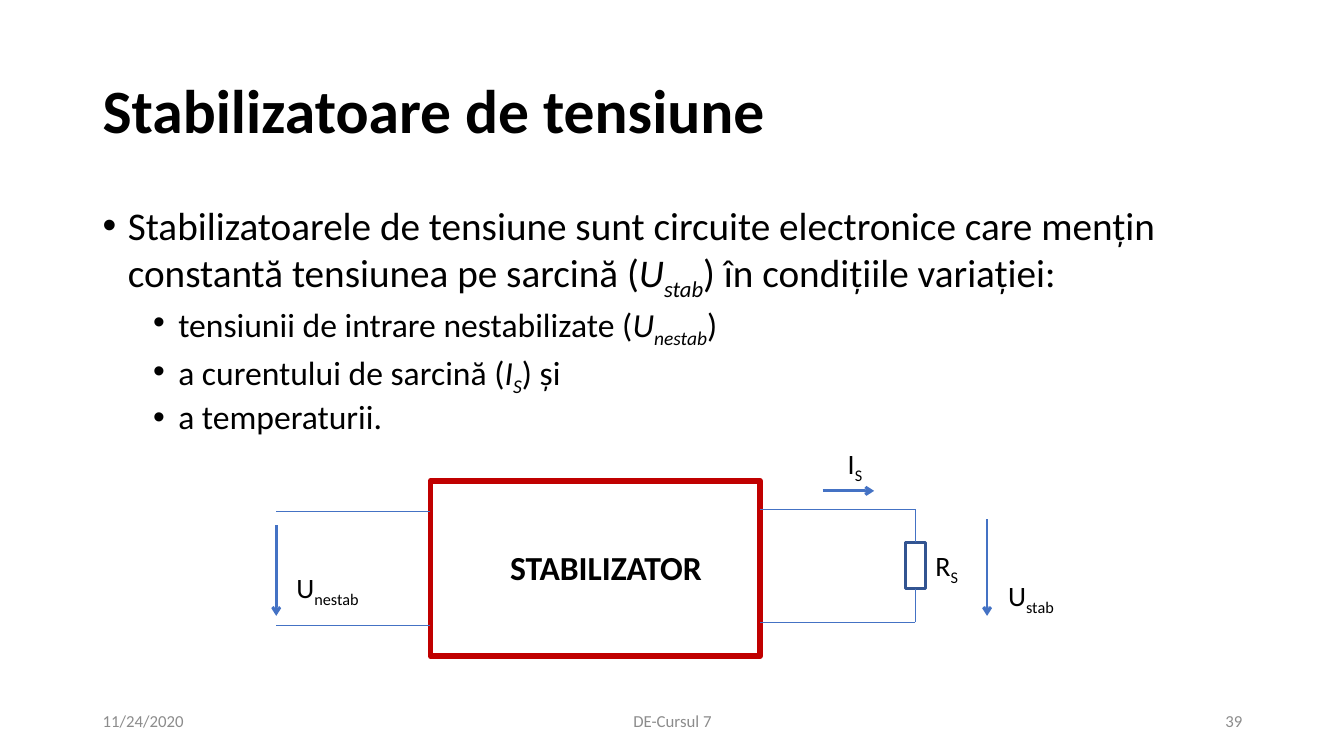
from pptx import Presentation
from pptx.dml.color import RGBColor
from pptx.enum.shapes import MSO_CONNECTOR, MSO_SHAPE
from pptx.enum.text import MSO_ANCHOR, PP_ALIGN
from pptx.oxml.ns import qn
from pptx.util import Inches, Pt
from lxml import etree

LINE = MSO_CONNECTOR.STRAIGHT
RECT = MSO_SHAPE.RECTANGLE
TOP, MID = MSO_ANCHOR.TOP, MSO_ANCHOR.MIDDLE
LEFT, CENTER, RIGHT = PP_ALIGN.LEFT, PP_ALIGN.CENTER, PP_ALIGN.RIGHT
COLORS = {"text": "000000", "foot": "8C8C8C", "wire": "4472C4",
          "block": "C00000", "load": "325491"}


class Board:
    def __init__(self, deck):
        self.slide = deck.slides.add_slide(deck.slide_layouts[6])
        self.font = "Calibri"

    def color(self, name):
        return RGBColor.from_string(COLORS[name])

    def runs(self, para, parts, size, color="text", bold=False):
        for text, style in parts:
            run = para.add_run()
            run.text = text
            look = {"name": self.font, "size": Pt(size), "bold": bold,
                    "italic": "i" in style}
            for key, value in look.items():
                setattr(run.font, key, value)
            run.font.color.rgb = self.color(color)
            if "s" in style:
                run.font._element.set("baseline", "-25000")

    def frame(self, box, wrap=True, anchor=TOP):
        shape = self.slide.shapes.add_textbox(*map(Inches, box))
        frame = shape.text_frame
        for key, value in {"word_wrap": wrap, "vertical_anchor": anchor}.items():
            setattr(frame, key, value)
        return frame

    def text(self, box, parts, size, color="text", bold=False,
             align=LEFT, wrap=True, anchor=TOP, space=1.0):
        para = self.frame(box, wrap, anchor).paragraphs[0]
        for key, value in {"alignment": align, "line_spacing": space}.items():
            setattr(para, key, value)
        self.runs(para, parts, size, color, bold)

    def bullets(self, box, items):
        frame = self.frame(box)
        for index, (level, parts) in enumerate(items):
            para = frame.add_paragraph() if index else frame.paragraphs[0]
            look = {"level": level, "line_spacing": 0.9,
                    "space_before": Pt(5 if level else 10)}
            for key, value in look.items():
                setattr(para, key, value)
            props = para._p.get_or_add_pPr()
            props.set("marL", str(Inches(0.25 + 0.5 * level)))
            props.set("indent", str(Inches(-0.25)))
            etree.SubElement(props, qn("a:buFont")).set("typeface", "Arial")
            etree.SubElement(props, qn("a:buChar")).set("char", "•")
            self.runs(para, parts, 28 - 4 * level)

    def rect(self, box, color, width):
        shape = self.slide.shapes.add_shape(RECT, *map(Inches, box))
        shape.shadow.inherit = False
        shape.fill.background()
        shape.line.color.rgb = self.color(color)
        shape.line.width = Pt(width)
        return shape

    def wire(self, start, end, width=0.5, arrow=False):
        line = self.slide.shapes.add_connector(LINE, *map(Inches, start + end))
        line.line.color.rgb = self.color("wire")
        line.line.width = Pt(width)
        if arrow:
            tail = etree.SubElement(line.line._get_or_add_ln(), qn("a:tailEnd"))
            tail.set("type", "arrow")
        etree.SubElement(line._element.spPr, qn("a:effectLst"))
        return line


def main():
    deck = Presentation()
    deck.slide_width, deck.slide_height = Inches(13.33), Inches(7.5)
    board = Board(deck)

    board.text((0.92, 0.4, 11.5, 1.45), [("Stabilizatoare de tensiune", "")], 44,
               bold=True, anchor=MID, space=0.9)
    board.bullets((0.92, 2, 11.5, 4.76), [
        (0, [("Stabilizatoarele de tensiune sunt circuite electronice care mențin "
              "constantă tensiunea pe sarcină (", ""), ("U", "i"), ("stab", "is"),
             (") în condițiile variației:", "")]),
        (1, [("tensiunii de intrare nestabilizate (", ""), ("U", "i"),
             ("nestab", "is"), (")", "")]),
        (1, [("a curentului de sarcină (", ""), ("I", "i"), ("S", "is"),
             (") și", "")]),
        (1, [("a temperaturii.", "")]),
    ])
    for left, width, words, align in [(0.92, 3, "11/24/2020", LEFT),
                                      (4.42, 4.5, "DE-Cursul 7", CENTER),
                                      (9.42, 3, "39", RIGHT)]:
        board.text((left, 6.95, width, 0.4), [(words, "")], 12, "foot",
                   align=align, anchor=MID)

    board.rect((4.27, 4.77, 3.27, 1.74), "block", 4)
    board.text((4.96, 5.38, 2.12, 0.5), [("STABILIZATOR", "")], 24,
               bold=True, wrap=False)
    for left, right, top, low in [(2.74, 4.27, 5.07, 6.2), (7.54, 9.08, 5.05, 6.17)]:
        for y in (top, low):
            board.wire((right, y), (left, y))
    load = board.rect((8.98, 5.38, 0.2, 0.46), "load", 2)
    for site, near, far in [(0, 5.38, 5.05), (2, 5.84, 6.17)]:
        board.wire((9.08, near), (9.08, far)).begin_connect(load, site)

    for start, end in [((2.74, 5.21), (2.74, 6.11)), ((9.79, 5.15), (9.79, 6.11)),
                       ((8.16, 4.87), (8.67, 4.87))]:
        board.wire(start, end, 2, True)
    for left, top, width, sign, sub in [(2.84, 5.61, 0.89, "U", "nestab"),
                                        (9.9, 5.69, 0.7, "U", "stab"),
                                        (9.18, 5.39, 0.44, "R", "S"),
                                        (8.31, 4.38, 0.36, "I", "S")]:
        board.text((left, top, width, 0.44), [(sign, ""), (sub, "s")], 20, wrap=False)

    deck.save("out.pptx")


if __name__ == "__main__":
    main()
